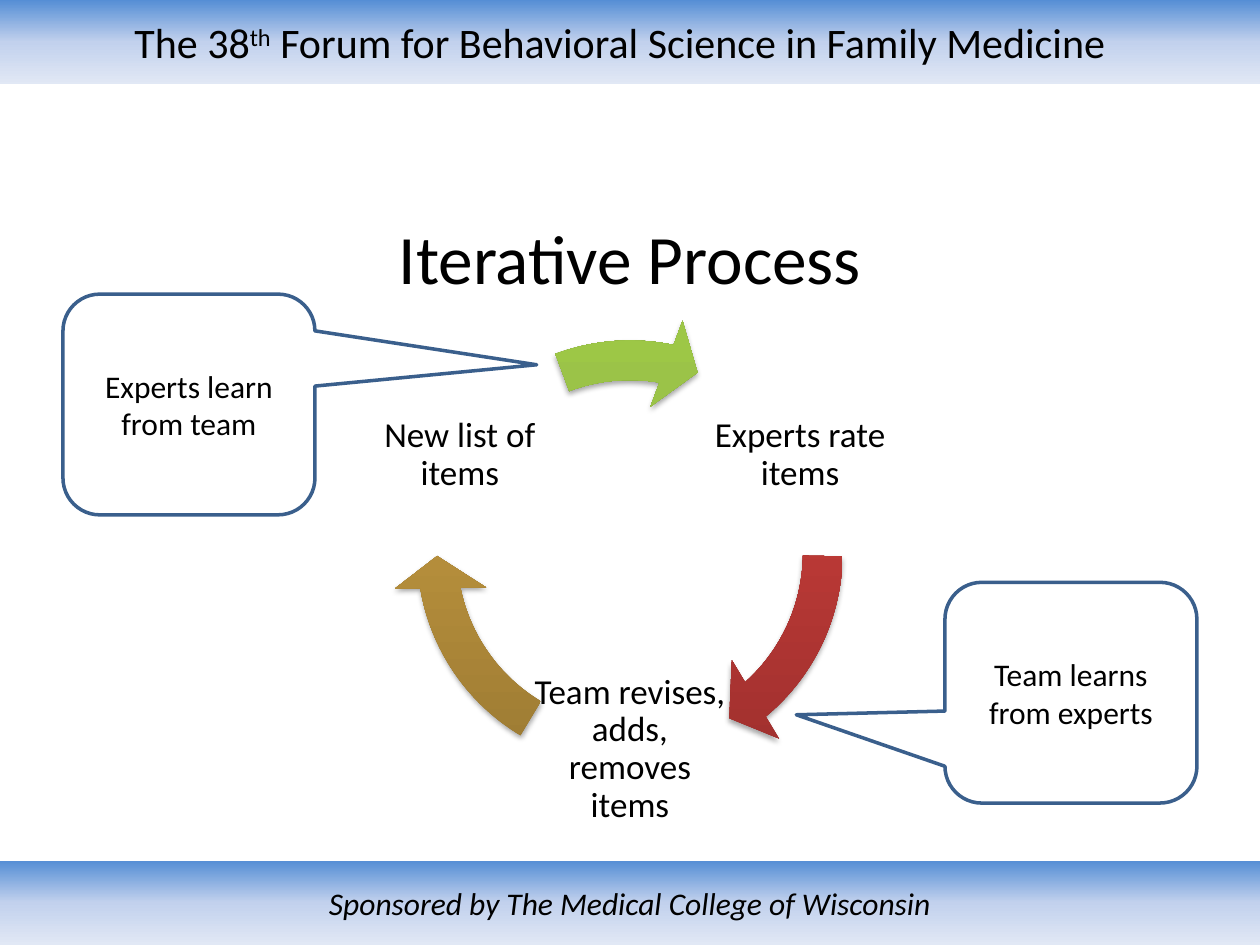
import math
import lxml.etree
import pptx
import pptx.dml.color
import pptx.enum.shapes
import pptx.enum.text
import pptx.oxml.ns
import pptx.util

Cm = pptx.util.Cm
Kind = pptx.enum.shapes.MSO_SHAPE
BLUE = [(0, "558ED5"), (50, "C2D1ED"), (100, "E1E8F5")]
MID = (12.7, 11.15)
RING = 3.96
STEPS = [
    ("Experts rate items", -30, 0.87, 49.38, ("9C2F2D", "CB3E3A", "CE3B37")),
    ("Team revises, adds, removes items", 90, 121.01, 169.52, ("997832", "C79C41", "CB9D3F")),
    ("New list of items", 210, 249.47, 280.93, ("779737", "9BC348", "9DC746")),
]


def tint(code):
    """Turn a hex string into a colour."""
    return pptx.dml.color.RGBColor.from_string(code)


def node(up, tag, **attrs):
    """Add a DrawingML child element."""
    kid = lxml.etree.SubElement(up, pptx.oxml.ns.qn("a:" + tag))
    for key, val in attrs.items():
        kid.set(key, str(val))
    return kid


def write(shape, *runs, size=18, italic=False, gap=1.0, pad=0.25, right=None):
    """Write centred text; a run given as a tuple is raised."""
    frame = shape.text_frame
    frame.word_wrap = True
    frame.vertical_anchor = pptx.enum.text.MSO_ANCHOR.MIDDLE
    frame.margin_left = Cm(pad)
    frame.margin_right = Cm(pad if right is None else right)
    frame.margin_top = frame.margin_bottom = Cm(min(pad, 0.13))
    para = frame.paragraphs[0]
    para.alignment = pptx.enum.text.PP_ALIGN.CENTER
    para.line_spacing = gap
    for item in runs:
        run = para.add_run()
        raised = isinstance(item, tuple)
        run.text = item[0] if raised else item
        font = run.font
        font.name, font.size, font.italic = "Calibri", pptx.util.Pt(size), italic
        font.color.rgb = tint("000000")
        if raised:
            run._r.get_or_add_rPr().set("baseline", "30000")


def label(slide, text, box, **look):
    """Add a text box."""
    write(slide.shapes.add_textbox(*map(Cm, box)), text, **look)


def solid(slide, kind, box, adjust=()):
    """Add a preset shape without shadow."""
    shape = slide.shapes.add_shape(kind, *map(Cm, box))
    shape.shadow.inherit = False
    for i, val in enumerate(adjust):
        shape.adjustments[i] = val
    return shape


def blend(shape, stops, angle):
    """Fill a shape with a gradient and drop its outline."""
    shape.fill.gradient()
    shape.fill.gradient_angle = angle
    stoplist = shape._element.spPr.find(".//" + pptx.oxml.ns.qn("a:gsLst"))
    for old in list(stoplist):
        stoplist.remove(old)
    for place, code in stops:
        node(node(stoplist, "gs", pos=place * 1000), "srgbClr", val=code)
    shape.line.fill.background()


def band(slide, top, *runs, **look):
    """Add a full-width gradient band with text."""
    shape = solid(slide, Kind.RECTANGLE, (0, top, 25.4, 1.7))
    blend(shape, BLUE, 270)
    write(shape, *runs, **look)


def arrow(slide, start, end, codes):
    """Add one curved arrow of the cycle with a soft shadow."""
    turn = 0.6
    side = 9.62
    box = (MID[0] - side / 2, MID[1] - side / 2, side, side)
    adjust = (0.083, 9.6 * turn, end * turn, start * turn, 0.096)
    shape = solid(slide, Kind.CIRCULAR_ARROW, box, adjust)
    blend(shape, zip((0, 80, 100), codes), 90)
    effects = shape._element.spPr.find(pptx.oxml.ns.qn("a:effectLst"))
    shade = node(effects, "outerShdw", blurRad=pptx.util.Pt(3.1),
                 dist=pptx.util.Pt(1.8), dir=5400000, rotWithShape=0)
    node(node(shade, "srgbClr", val="000000"), "alpha", val=35000)


def cycle(slide):
    """Place the steps evenly round the ring."""
    side = 4.06
    for text, angle, start, end, codes in STEPS:
        turn = math.radians(angle)
        left = MID[0] + RING * math.cos(turn) - side / 2
        top = MID[1] + RING * math.sin(turn) - side / 2
        label(slide, text, (left, top, side, side), size=20, gap=0.9, pad=0.08)
        arrow(slide, start, end, codes)


def callout(slide, text, left, top, tip):
    """Add an outlined speech callout."""
    shape = solid(slide, Kind.ROUNDED_RECTANGULAR_CALLOUT,
                  (left, top, 5.08, 4.45), (*tip, 0.167))
    shape.fill.background()
    shape.line.color.rgb = tint("3A5F8C")
    shape.line.width = pptx.util.Pt(2)
    write(shape, text)


def main():
    """Build and save the slide."""
    deck = pptx.Presentation()
    deck.slide_width, deck.slide_height = Cm(25.4), Cm(19.05)
    slide = deck.slides.add_slide(deck.slide_layouts[6])
    band(slide, 0, "The 38", ("th",), " Forum for Behavioral Science in Family Medicine",
         size=24, right=0.65)
    band(slide, 17.35, "Sponsored by The Medical College of Wisconsin", italic=True)
    cycle(slide)
    label(slide, "Iterative Process", (1.27, 4.23, 22.86, 1.9), size=39.6)
    callout(slide, "Team learns from experts", 19.05, 11.74, (-1.09, 0.1))
    callout(slide, "Experts learn from team", 1.27, 5.93, (1.38, -0.18))
    deck.save("out.pptx")


if __name__ == "__main__":
    main()
